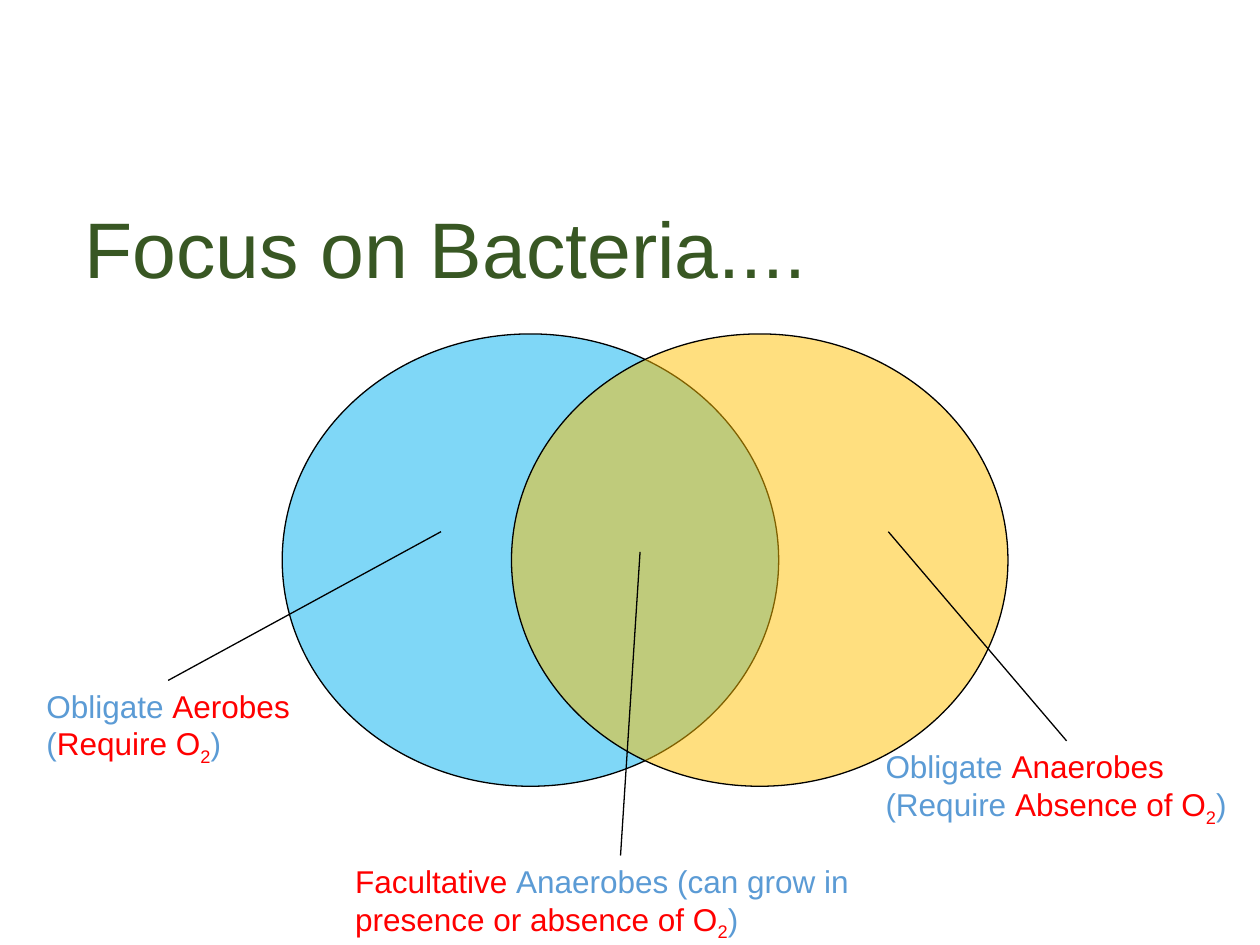
from dataclasses import dataclass

from lxml.etree import SubElement
from pptx import Presentation
from pptx.dml.color import RGBColor
from pptx.enum.shapes import MSO_CONNECTOR, MSO_SHAPE
from pptx.enum.text import MSO_ANCHOR, MSO_AUTO_SIZE
from pptx.oxml.ns import qn
from pptx.util import Inches, Pt


@dataclass(frozen=True)
class Theme:
    font: str = "Arial"
    title_size: float = 45
    label_size: float = 18
    line_width: float = 0.75
    title: str = "385723"
    plain: str = "5B9BD5"
    key: str = "FF0000"
    line: str = "000000"
    aerobic: str = "00B0F0"
    anaerobic: str = "FFC000"


@dataclass(frozen=True)
class Span:
    text: str
    color: str
    subscript: bool = False


@dataclass(frozen=True)
class Label:
    left: float
    top: float
    width: float
    target: tuple[float, float]
    paragraphs: list[list[Span]]


THEME = Theme()
CIRCLES = [(2.24, THEME.aerobic), (4.06, THEME.anaerobic)]


def plain(text: str) -> Span:
    return Span(text, THEME.plain)


def key(text: str) -> Span:
    return Span(text, THEME.key)


OXYGEN_END = [Span("2", THEME.key, subscript=True), plain(")")]
LABELS = [
    Label(0.27, 5.4, 2.13, (3.5, 4.22), [
        [plain("Obligate "), key("Aerobes "), plain("("), key("Require O"), *OXYGEN_END],
    ]),
    Label(2.72, 6.79, 4.41, (5.08, 4.38), [
        [key("Facultative "), plain("Anaerobes (can grow in "),
         key("presence or absence of O"), *OXYGEN_END],
    ]),
    Label(6.93, 5.88, 3.07, (7.05, 4.22), [
        [plain("Obligate "), key("Anaerobes")],
        [plain("(Require "), key("Absence of O"), *OXYGEN_END],
    ]),
]


def add_spans(para, spans: list[Span], size: float) -> None:
    para.font.name = THEME.font
    para.font.size = Pt(size)
    for span in spans:
        run = para.add_run()
        run.text = span.text
        run.font.color.rgb = RGBColor.from_string(span.color)
        if span.subscript:
            run.font._element.set("baseline", "-25000")


def add_title(page, text: str) -> None:
    box = page.shapes.add_textbox(Inches(0.57), Inches(1.5), Inches(8.39), Inches(1.02))
    frame = box.text_frame
    frame.word_wrap = True
    frame.vertical_anchor = MSO_ANCHOR.MIDDLE
    para = frame.paragraphs[0]
    para.line_spacing = 0.9
    add_spans(para, [Span(text, THEME.title)], THEME.title_size)


def set_line(line) -> None:
    line.color.rgb = RGBColor.from_string(THEME.line)
    line.width = Pt(THEME.line_width)


def add_circle(page, left: float, color: str) -> None:
    """Draw one half-transparent set of the Venn diagram."""
    circle = page.shapes.add_shape(
        MSO_SHAPE.OVAL, Inches(left), Inches(2.65), Inches(3.94), Inches(3.59))
    circle.shadow.inherit = False
    circle.fill.solid()
    circle.fill.fore_color.rgb = RGBColor.from_string(color)
    fill_color = circle.element.spPr.find(qn("a:solidFill"))[0]
    SubElement(fill_color, qn("a:alpha"), val="50000")
    set_line(circle.line)


def add_label(page, label: Label):
    box = page.shapes.add_textbox(
        Inches(label.left), Inches(label.top), Inches(label.width), Inches(0.71))
    frame = box.text_frame
    frame.word_wrap = True
    frame.auto_size = MSO_AUTO_SIZE.SHAPE_TO_FIT_TEXT
    for index, spans in enumerate(label.paragraphs):
        para = frame.add_paragraph() if index else frame.paragraphs[0]
        add_spans(para, spans, THEME.label_size)
    return box


def add_leader(page, box, target: tuple[float, float]) -> None:
    """Join the top of a label to its region of the diagram."""
    x, y = map(Inches, target)
    leader = page.shapes.add_connector(MSO_CONNECTOR.STRAIGHT, x, y, x, y)
    leader.begin_connect(box, 0)
    set_line(leader.line)
    SubElement(leader.element.spPr, qn("a:effectLst"))


def main() -> None:
    deck = Presentation()
    deck.slide_width, deck.slide_height = Inches(10), Inches(7.5)
    page = deck.slides.add_slide(deck.slide_layouts[6])
    add_title(page, "Focus on Bacteria....")
    for left, color in CIRCLES:
        add_circle(page, left, color)
    boxes = [add_label(page, label) for label in LABELS]
    for box, label in zip(boxes, LABELS):
        add_leader(page, box, label.target)
    deck.save("out.pptx")


if __name__ == "__main__":
    main()
